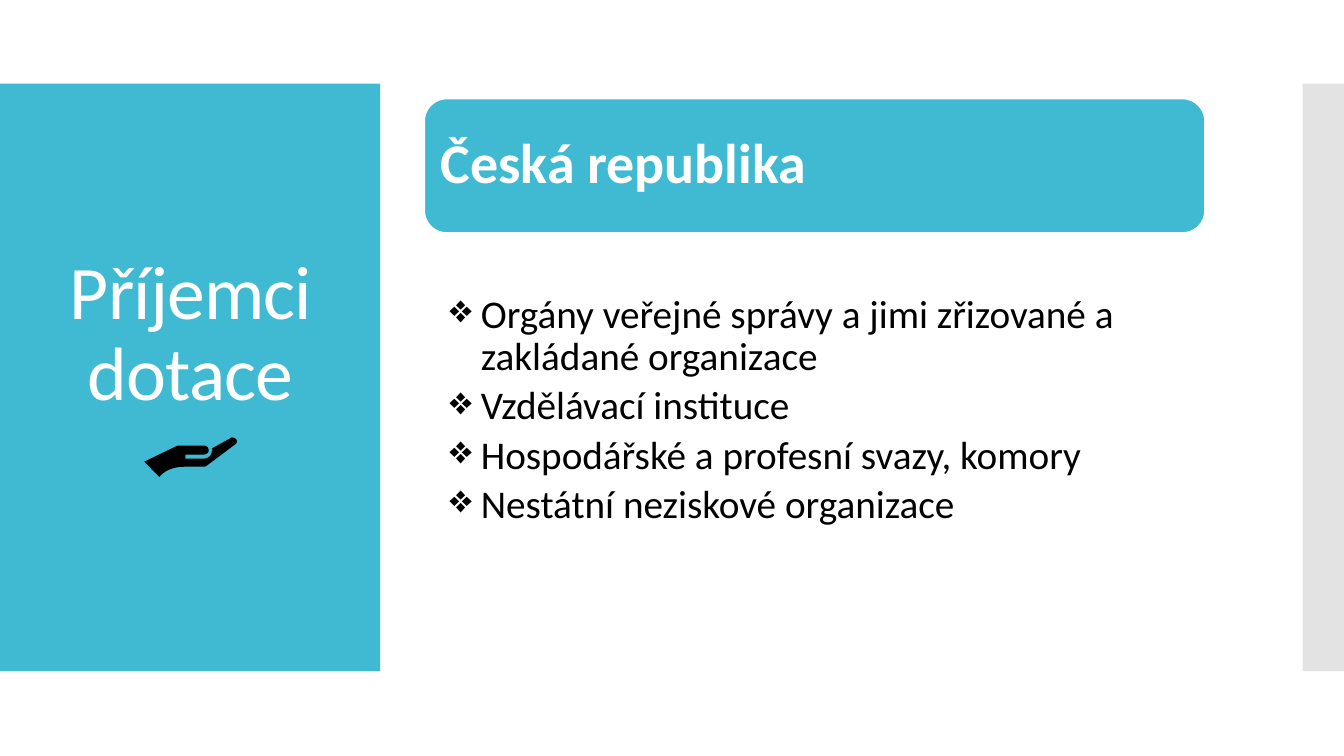
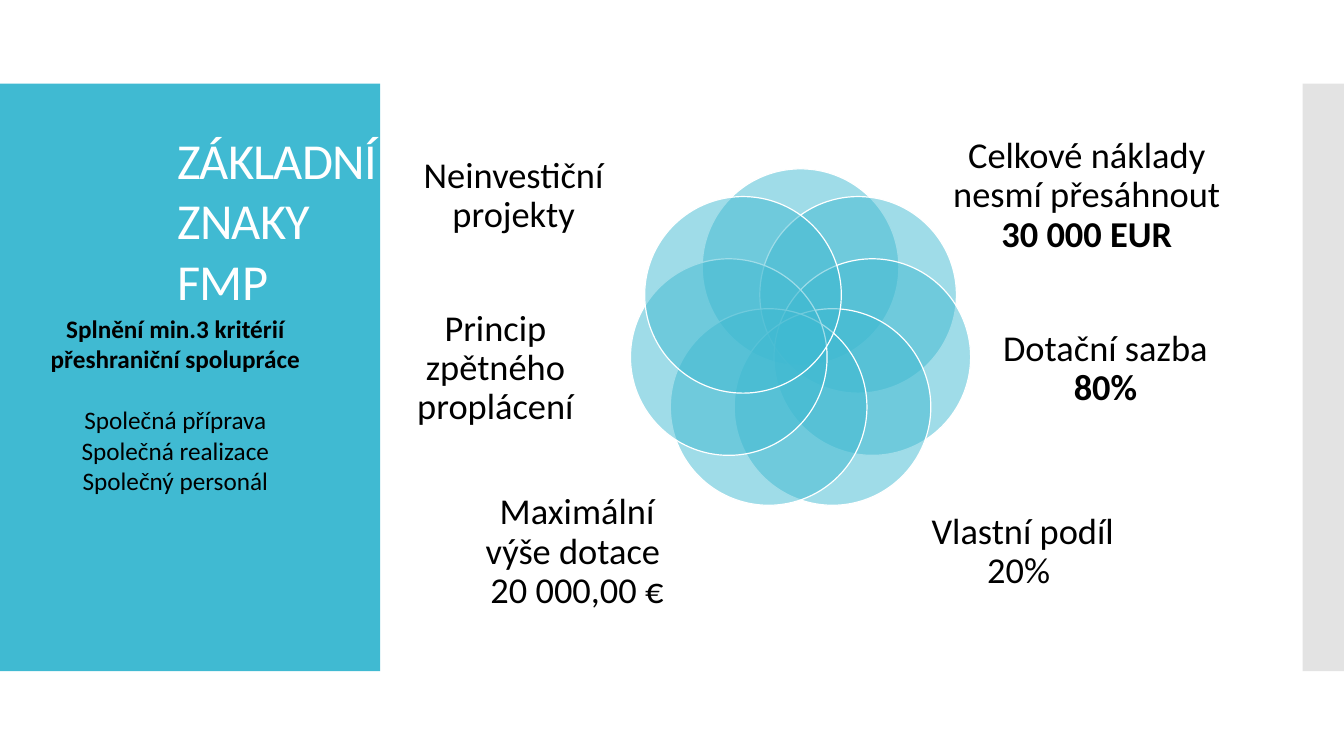
from dataclasses import dataclass
from math import cos, pi, sin

from lxml.etree import SubElement
from pptx import Presentation
from pptx.dml.color import RGBColor
from pptx.enum.shapes import MSO_SHAPE
from pptx.enum.text import MSO_ANCHOR, PP_ALIGN
from pptx.oxml.ns import qn
from pptx.util import Inches, Pt


@dataclass(frozen=True)
class Theme:
    """Colours, font and type sizes."""
    font: str = "Calibri"
    accent: RGBColor = RGBColor(0x40, 0xBA, 0xD2)
    grey: RGBColor = RGBColor(0xC8, 0xC8, 0xC8)
    white: RGBColor = RGBColor(0xFF, 0xFF, 0xFF)
    black: RGBColor = RGBColor(0, 0, 0)
    title: int = 54
    banner: int = 40
    subtitle: int = 36
    bullet: int = 28
    label: int = 26
    note: int = 18
    outline: float = 0.85


HAND = [
    (2.35, 4.38), (2.35, 4.36, 2.33, 4.34, 2.30, 4.34),
    (2.30, 4.34, 2.29, 4.34, 2.28, 4.35), (2.10, 4.45),
    (2.11, 4.46, 2.11, 4.47, 2.10, 4.48), (2.10, 4.52, 2.06, 4.55, 2.02, 4.55),
    (1.84, 4.55), (1.84, 4.51), (2.02, 4.51),
    (2.05, 4.51, 2.07, 4.49, 2.07, 4.47), (2.07, 4.44, 2.05, 4.42, 2.02, 4.42),
    (1.77, 4.42), (1.76, 4.42, 1.74, 4.43, 1.72, 4.44),
    (1.43, 4.58), (1.58, 4.73), (1.64, 4.66, 1.73, 4.63, 1.83, 4.63),
    (2.02, 4.63), (2.03, 4.63, 2.04, 4.63, 2.05, 4.62),
    (2.33, 4.41), (2.34, 4.41, 2.35, 4.39, 2.35, 4.38),
]

RECIPIENTS = [
    "Orgány veřejné správy a jimi zřizované a zakládané organizace",
    "Vzdělávací instituce",
    "Hospodářské a profesní svazy, komory",
    "Nestátní neziskové organizace",
]

LABELS = [
    ((9.42, 1.29, 2.72, 1.31), "Celkové náklady nesmí přesáhnout ", "30 000 EUR"),
    ((9.93, 2.96, 2.07, 1.4), "Dotační sazba ", "80%"),
    ((9.03, 4.84, 2.23, 1.28), "Vlastní podíl 20% ", ""),
    ((4.61, 4.84, 2.23, 1.28), "Maximální výše dotace \n20 000,00 €", ""),
    ((3.88, 2.96, 2.07, 1.4), "Princip zpětného proplácení", ""),
    ((4.04, 1.29, 2.11, 1.31), "Neinvestiční projekty", ""),
]


class Deck:
    """Holds the style and the current slide."""

    def __init__(self, theme):
        """Start an empty widescreen deck."""
        self.theme = theme
        self.prs = Presentation()
        self.prs.slide_width, self.prs.slide_height = Inches(13.33), Inches(7.5)
        self.s = None

    def slide(self):
        """Add a slide with the two side bands."""
        self.s = self.prs.slides.add_slide(self.prs.slide_layouts[6])
        self.shape(MSO_SHAPE.RECTANGLE, (0, 0.83, 3.77, 5.83), self.theme.accent)
        self.shape(MSO_SHAPE.RECTANGLE, (12.92, 0.83, 0.41, 5.83), self.theme.grey, alpha=50)

    def paint(self, sp, color, alpha=100, outlined=False):
        """Set fill, transparency and outline."""
        sp.shadow.inherit = False
        sp.fill.solid()
        sp.fill.fore_color.rgb = color
        if alpha < 100:
            clr = sp.element.spPr.find(f"{qn('a:solidFill')}/{qn('a:srgbClr')}")
            SubElement(clr, qn("a:alpha"), val=str(alpha * 1000))
        if outlined:
            sp.line.color.rgb = self.theme.white
            sp.line.width = Pt(self.theme.outline)
        else:
            sp.line.fill.background()

    def shape(self, kind, box, color, alpha=100, outlined=False):
        """Add a filled preset shape."""
        sp = self.s.shapes.add_shape(kind, *map(Inches, box))
        self.paint(sp, color, alpha, outlined)
        return sp

    def frame(self, sp, inset=(0, 0, 0, 0), anchor=MSO_ANCHOR.MIDDLE, wrap=True):
        """Set wrapping, anchor and insets."""
        tf = sp.text_frame
        tf.word_wrap, tf.vertical_anchor = wrap, anchor
        tf.margin_left, tf.margin_top, tf.margin_right, tf.margin_bottom = map(Inches, inset)
        return tf

    def paragraphs(self, tf, lines, size, color, align=PP_ALIGN.CENTER, bold=False, spacing=0.9):
        """Fill a frame with uniform paragraphs."""
        for i, line in enumerate(lines):
            p = tf.add_paragraph() if i else tf.paragraphs[0]
            p.text, p.alignment, p.line_spacing = line, align, spacing
            p.font.name, p.font.size, p.font.bold = self.theme.font, Pt(size), bold
            p.font.color.rgb = color

    def text(self, box, lines, size, color, inset=(0, 0, 0, 0),
             anchor=MSO_ANCHOR.MIDDLE, wrap=True, **style):
        """Add a text box."""
        sp = self.s.shapes.add_textbox(*map(Inches, box))
        self.paragraphs(self.frame(sp, inset, anchor, wrap), lines, size, color, **style)
        return sp

    def title(self, box, text, size, **style):
        """Add a tightly tracked white title."""
        sp = self.text(box, [text], size, self.theme.white, **style)
        for font in sp.element.iter(qn("a:defRPr")):
            font.set("spc", "-60")

    def banner(self, box, text):
        """Add a rounded banner with a bold heading."""
        sp = self.shape(MSO_SHAPE.ROUNDED_RECTANGLE, box, self.theme.accent, outlined=True)
        self.paragraphs(self.frame(sp, (0.1, 0.1, 0.1, 0.1)), [text], self.theme.banner,
                        self.theme.white, align=PP_ALIGN.LEFT, bold=True)

    def bullets(self, box, lines):
        """Add a diamond-bulleted list."""
        sp = self.text(box, lines, self.theme.bullet, self.theme.black,
                       inset=(0.25, 0.04, 0.22, 0.04), anchor=MSO_ANCHOR.TOP,
                       align=PP_ALIGN.LEFT)
        for p in sp.text_frame.paragraphs:
            p.space_after = Pt(5)
        for ppr in sp.element.iter(qn("a:pPr")):
            ppr.set("marL", str(Inches(0.31)))
            ppr.set("indent", str(-Inches(0.31)))
            bullet = ppr.makeelement(qn("a:buChar"), {"char": "❖"})
            ppr.find(qn("a:defRPr")).addprevious(bullet)

    def outline(self, segments, color, steps=6):
        """Add a freeform from points and cubic curves."""
        points = [segments[0]]
        for seg in segments[1:]:
            if len(seg) == 2:
                points.append(seg)
                continue
            ctrl = [points[-1], seg[:2], seg[2:4], seg[4:]]
            for t in (i / steps for i in range(1, steps + 1)):
                w = ((1 - t) ** 3, 3 * t * (1 - t) ** 2, 3 * t * t * (1 - t), t ** 3)
                points.append(tuple(sum(a * c[k] for a, c in zip(w, ctrl)) for k in (0, 1)))
        first, *rest = [(Inches(x), Inches(y)) for x, y in points]
        fb = self.s.shapes.build_freeform(*first)
        fb.add_line_segments(rest, close=True)
        self.paint(fb.convert_to_shape(), color)

    def ring(self, cx, cy, radius, size, count):
        """Add overlapping circles clockwise from the top."""
        for i in range(count):
            angle = 2 * pi * i / count
            x = cx + radius * sin(angle) - size / 2
            y = cy - radius * cos(angle) - size / 2
            self.shape(MSO_SHAPE.OVAL, (x, y, size, size), self.theme.accent, 50, True)

    def label(self, box, text, strong):
        """Add a centred label with an optional bold ending."""
        sp = self.text(box, [text], self.theme.label, self.theme.black)
        if strong:
            r = sp.text_frame.paragraphs[0].add_run()
            r.text, r.font.bold = strong, True


def recipients(deck):
    """Build the slide on grant recipients."""
    deck.slide()
    deck.title((0.28, 1.23, 3.22, 4.2), "Příjemci dotace", deck.theme.title,
               inset=(0.1, 0.05, 0.1, 0.05))
    deck.banner((4.21, 0.98, 7.74, 1.33), "Česká republika")
    deck.bullets((4.21, 2.88, 7.74, 2.5), RECIPIENTS)
    deck.outline(HAND, deck.theme.black)


def key_features(deck):
    """Build the slide on the fund's key features."""
    t = deck.theme
    deck.slide()
    deck.title((1.76, 1.28, 2.01, 1.83), "ZÁKLADNÍ\nZNAKY\nFMP", t.subtitle,
               anchor=MSO_ANCHOR.TOP, wrap=False, align=PP_ALIGN.LEFT, spacing=1.0)
    sp = deck.text((0.16, 3.11, 3.16, 1.9),
                   ["Splnění min.3 kritérií přeshraniční spolupráce",
                    "Společná příprava\nSpolečná realizace\nSpolečný personál"],
                   t.note, t.black, inset=(0.1, 0, 0.1, 0), anchor=MSO_ANCHOR.TOP,
                   spacing=1.0)
    criteria, shared = sp.text_frame.paragraphs
    criteria.font.bold = True
    shared.space_before = Pt(22)
    deck.ring(7.94, 3.38, 0.73, 1.95, 7)
    for box, text, strong in LABELS:
        deck.label(box, text, strong)


def main():
    """Build and save the deck."""
    deck = Deck(Theme())
    recipients(deck)
    key_features(deck)
    deck.prs.save("out.pptx")


if __name__ == "__main__":
    main()
